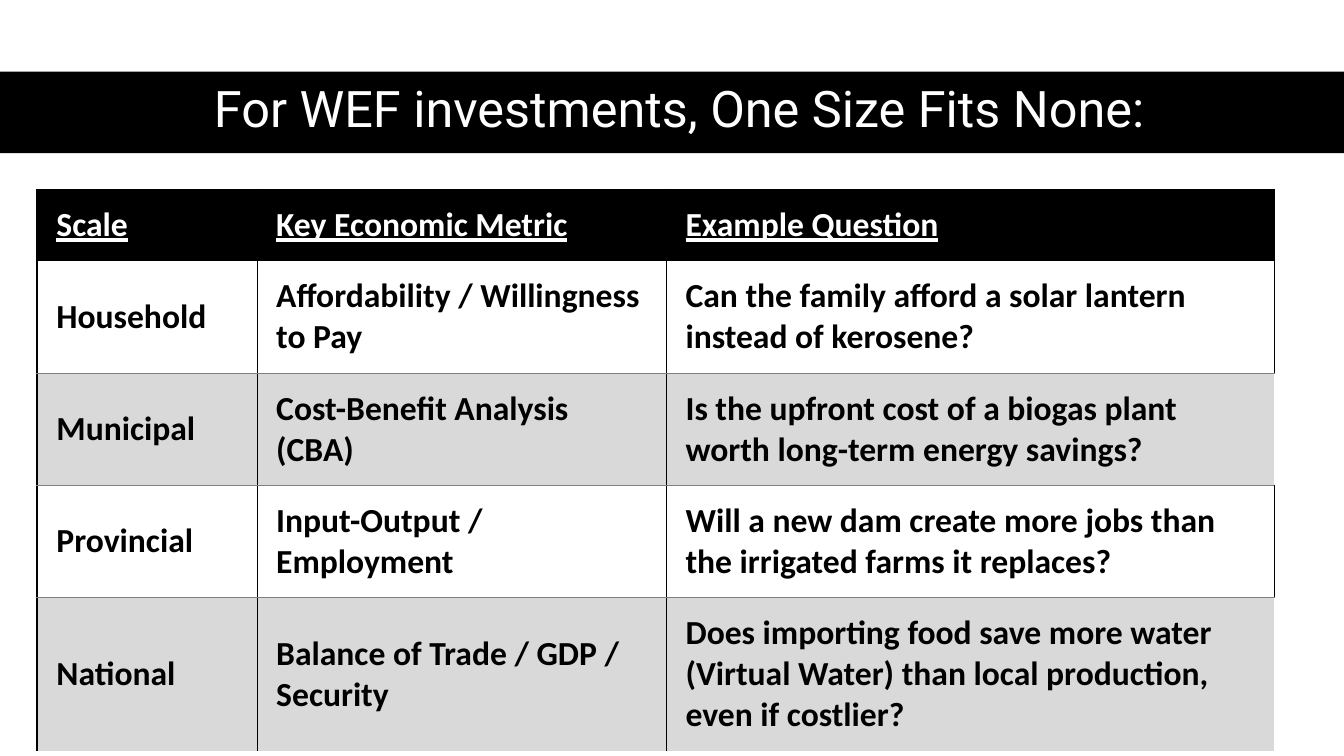
from lxml.etree import SubElement
from pptx import Presentation
from pptx.dml.color import RGBColor
from pptx.enum.shapes import MSO_SHAPE
from pptx.enum.text import MSO_ANCHOR, PP_ALIGN
from pptx.oxml.ns import qn
from pptx.util import Inches, Pt

BLACK = RGBColor(0x00, 0x00, 0x00)
WHITE = RGBColor(0xFF, 0xFF, 0xFF)
GREY = RGBColor(0x80, 0x80, 0x80)
LIGHT_GREY = RGBColor(0xD9, 0xD9, 0xD9)

NO_STYLE = "{2D5ABB26-0587-4C30-8999-92F81FD0307C}"
COLUMN_WIDTHS = [2.18, 4.06, 6.03]
ROW_HEIGHTS = [0.68, 1.02, 1.02, 1.02, 1.02]
ROWS = [
    ("Scale", "Key Economic Metric", "Example Question"),
    ("Household", "Affordability / Willingness to Pay",
     "Can the family afford a solar lantern instead of kerosene?"),
    ("Municipal", "Cost-Benefit Analysis (CBA)",
     "Is the upfront cost of a biogas plant worth long-term energy savings?"),
    ("Provincial", "Input-Output / Employment",
     "Will a new dam create more jobs than the irrigated farms it replaces?"),
    ("National", "Balance of Trade / GDP / Security",
     "Does importing food save more water (Virtual Water) than local production, "
     "even if costlier?"),
]


def add_border(cell, side, color, width):
    line = SubElement(cell._tc.get_or_add_tcPr(), qn(f"a:ln{side}"), w=str(Pt(width)))
    fill = SubElement(line, qn("a:solidFill"))
    SubElement(fill, qn("a:srgbClr"), val=str(color))


presentation = Presentation()
presentation.slide_width = Inches(13.33)
presentation.slide_height = Inches(7.5)
slide = presentation.slides.add_slide(presentation.slide_layouts[5])

# Title on a black band
title = slide.shapes.title
title.left, title.top = Inches(0.61), Inches(0.7)
title.width, title.height = Inches(12.26), Inches(0.81)
title.text_frame.text = "For WEF investments, One Size Fits None:"
title.text_frame.vertical_anchor = MSO_ANCHOR.MIDDLE
paragraph = title.text_frame.paragraphs[0]
paragraph.alignment = PP_ALIGN.CENTER
paragraph.line_spacing = 0.9
paragraph.font.name = "Roboto"
paragraph.font.size = Pt(36)
paragraph.font.color.rgb = WHITE

band = slide.shapes.add_shape(
    MSO_SHAPE.RECTANGLE, 0, Inches(0.71), presentation.slide_width, Inches(0.81))
band.shadow.inherit = False
band.fill.solid()
band.fill.fore_color.rgb = BLACK
band.line.fill.background()
title._element.addprevious(band._element)

# Table of scales
table = slide.shapes.add_table(
    len(ROWS), len(COLUMN_WIDTHS), Inches(0.37), Inches(1.88),
    Inches(sum(COLUMN_WIDTHS)), Inches(sum(ROW_HEIGHTS))).table
table._tbl.tblPr.find(qn("a:tableStyleId")).text = NO_STYLE
table.first_row = True
table.horz_banding = False
for column, width in zip(table.columns, COLUMN_WIDTHS):
    column.width = Inches(width)
for row, height in zip(table.rows, ROW_HEIGHTS):
    row.height = Inches(height)

last_column = len(COLUMN_WIDTHS) - 1
for row_index, texts in enumerate(ROWS):
    is_header = row_index == 0
    is_shaded = not is_header and row_index % 2 == 0
    for column_index, text in enumerate(texts):
        cell = table.cell(row_index, column_index)
        is_last = column_index == last_column

        # Borders in the order left, right, top, bottom
        add_border(cell, "L", BLACK, 1.5 if column_index == 0 else 0.75)
        if not is_last:
            add_border(cell, "R", BLACK, 0.75)
        elif not is_shaded:
            add_border(cell, "R", BLACK, 1.5)
        if is_header:
            add_border(cell, "T", BLACK, 1.5)
        elif is_shaded:
            add_border(cell, "T", GREY, 0.5)
        else:
            add_border(cell, "B", GREY, 0.5)

        if is_header or is_shaded:
            cell.fill.solid()
            cell.fill.fore_color.rgb = BLACK if is_header else LIGHT_GREY
        else:
            cell.fill.background()

        cell.text = text
        cell.vertical_anchor = MSO_ANCHOR.MIDDLE
        cell.margin_left = Inches(0.19)
        cell.margin_right = Inches(0.1 if is_last and not is_header else 0.13)
        cell.margin_top = cell.margin_bottom = Inches(0.15)
        font = cell.text_frame.paragraphs[0].font
        font.name = "Calibri"
        font.size = Pt(24)
        font.bold = True
        font.underline = is_header
        font.color.rgb = WHITE if is_header else BLACK

presentation.save("out.pptx")
